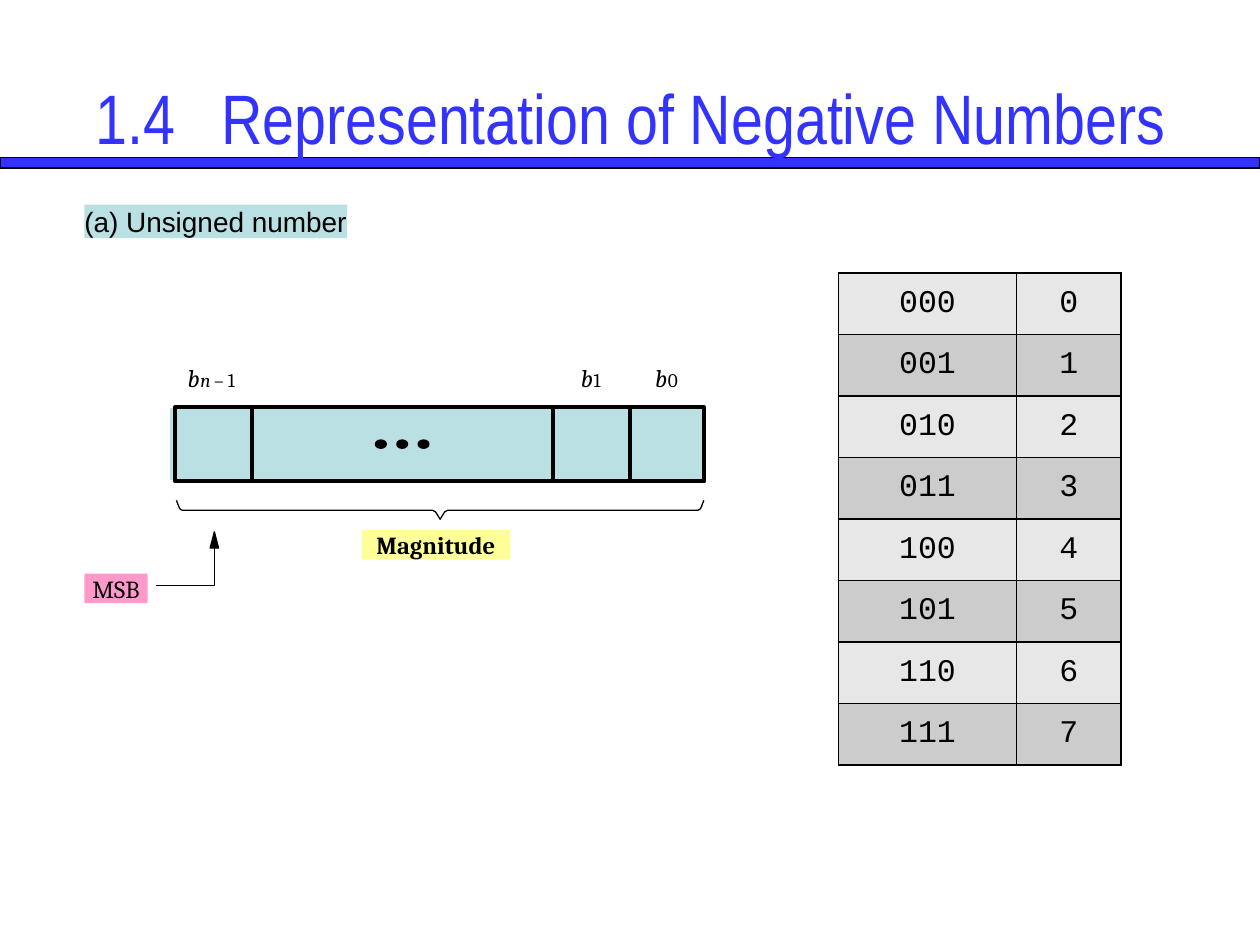
import pptx
import pptx.util
import pptx.dml.color
import pptx.enum.shapes
import pptx.enum.text
import pptx.oxml

Pt = pptx.util.Pt
Shape = pptx.enum.shapes.MSO_SHAPE
Align = pptx.enum.text.PP_ALIGN
Anchor = pptx.enum.text.MSO_ANCHOR
NAMESPACE = "http://schemas.openxmlformats.org/drawingml/2006/main"
COLORS = {
    "blue": "3333FF", "black": "000000", "white": "FFFFFF", "teal": "BBE0E3",
    "yellow": "FFFF99", "pink": "FF99CC", "light": "E7E7E7", "dark": "CCCCCC",
}


def rgb(name):
    return pptx.dml.color.RGBColor.from_string(COLORS[name])


def set_text(frame, text, size, font, color="black", bold=False, italic=False,
             align=Align.LEFT, anchor=Anchor.MIDDLE, wrap=False, margin=0):
    frame.auto_size = pptx.enum.text.MSO_AUTO_SIZE.NONE
    frame.word_wrap = wrap
    frame.vertical_anchor = anchor
    frame.margin_left = frame.margin_right = Pt(margin)
    frame.margin_top = frame.margin_bottom = Pt(margin / 2)
    paragraph = frame.paragraphs[0]
    paragraph.alignment = align
    run = paragraph.add_run()
    run.text = text
    run.font.size = Pt(size)
    run.font.name = font
    run.font.bold = bold
    run.font.italic = italic
    run.font.color.rgb = rgb(color)


def style_shape(shape, fill=None, line=None, line_width=0.75):
    shape.shadow.inherit = False
    if fill:
        shape.fill.solid()
        shape.fill.fore_color.rgb = rgb(fill)
    else:
        shape.fill.background()
    if line:
        shape.line.color.rgb = rgb(line)
        shape.line.width = Pt(line_width)
    else:
        shape.line.fill.background()


def add_shape(slide, kind, left, top, width, height, **style):
    shape = slide.shapes.add_shape(kind, Pt(left), Pt(top), Pt(width), Pt(height))
    style_shape(shape, **style)
    return shape


def add_path(slide, left, top, points):
    points = [(Pt(left + x), Pt(top + y)) for x, y in points]
    builder = slide.shapes.build_freeform(*points[0])
    builder.add_line_segments(points[1:], close=False)
    style_shape(builder.convert_to_shape(), line="black", line_width=0)


def add_tag(slide, text, left, top, width, height, fill, size=14, font="Cambria", **text_format):
    tag = add_shape(slide, Shape.RECTANGLE, left, top, width, height, fill=fill)
    set_text(tag.text_frame, text, size, font, **text_format)


def add_title(slide, left, top, width, height):
    bar = add_shape(slide, Shape.RECTANGLE, 0, 90, 720, 6, fill="blue", line="black")
    title = slide.shapes.title
    title._element.addprevious(bar._element)
    title.left, title.top, title.width, title.height = map(Pt, (left, top, width, height))
    set_text(title.text_frame, "1.4\tRepresentation of Negative Numbers", 40, "Arial Narrow",
             color="blue", align=Align.CENTER, wrap=True, margin=7.2)


def add_bit_label(slide, left, top, subscript):
    pieces = [("b", 0, 0, 14)]
    pieces += [(sign, 7.3 + 7.9 * i, 2.9, 11) for i, sign in enumerate(subscript)]
    for text, x, y, size in pieces:
        box = slide.shapes.add_textbox(Pt(left + x), Pt(top + y), Pt(8), Pt(size * 1.18))
        set_text(box.text_frame, text, size, "Cambria", italic=text.isalpha(), anchor=Anchor.TOP)


def add_brace(slide, left, top, width, height):
    middle = width / 2
    shoulder = height * 0.53
    half = [(0, 0), (1.7, shoulder * 0.75), (2.4, shoulder * 0.92), (3.6, shoulder),
            (middle - 4.3, shoulder), (middle - 2.6, shoulder * 1.15), (middle, height)]
    mirrored = [(width - x, y) for x, y in reversed(half[:-1])]
    add_path(slide, left, top, half + mirrored)


def add_register(slide, left, top, height):
    add_shape(slide, Shape.RECTANGLE, left - 3.6, top, 306, height - 0.7, fill="teal", line="white")
    for i in range(3):
        add_shape(slide, Shape.OVAL, left + 115.2 + 12.2 * i, top + 19.6, 4.7, 3.2,
                  fill="black", line="black", line_width=2.25)
    x = left
    for width in (43.9, 172.1, 43.9, 42.5):
        add_shape(slide, Shape.RECTANGLE, x, top, width, height, line="black", line_width=2.25)
        x += width


def add_diagram(slide, left, top):
    for x, subscript in ((59, "n–1"), (283.7, "1"), (326.2, "0")):
        add_bit_label(slide, left + x, top, subscript)
    add_register(slide, left + 51.9, top + 25.2, 42.5)
    add_brace(slide, left + 52.6, top + 78.5, 301.4, 10.8)
    add_tag(slide, "Magnitude", left + 158.4, top + 95.6, 85, 16.8, "yellow",
            bold=True, align=Align.CENTER)
    add_tag(slide, "MSB", left, top + 120.4, 36.2, 16.8, "pink", align=Align.CENTER)
    add_path(slide, left + 41, top + 105.8, [(0, 21.6), (33.3, 21.6), (33.3, 0)])
    add_shape(slide, Shape.ISOSCELES_TRIANGLE, left + 71.9, top + 96.5, 4.8, 9.3,
              fill="black", line="black", line_width=0)


def set_borders(cell, width):
    properties = cell._tc.get_or_add_tcPr()
    for i, side in enumerate(("lnL", "lnR", "lnT", "lnB")):
        properties.insert(i, pptx.oxml.parse_xml(
            f'<a:{side} xmlns:a="{NAMESPACE}" w="{int(Pt(width))}"><a:solidFill>'
            f'<a:srgbClr val="{COLORS["black"]}"/></a:solidFill></a:{side}>'))


def fill_cell(cell, text, fill):
    cell.fill.solid()
    cell.fill.fore_color.rgb = rgb(fill)
    cell.vertical_anchor = Anchor.MIDDLE
    paragraph = cell.text_frame.paragraphs[0]
    paragraph.alignment = Align.CENTER
    run = paragraph.add_run()
    run.text = text
    run.font.size = Pt(18)
    run.font.name = "Courier New"
    run.font.color.rgb = rgb("black")
    set_borders(cell, 1)


def add_values(slide, left, top, widths, row_height, count):
    frame = slide.shapes.add_table(count, len(widths), Pt(left), Pt(top),
                                   Pt(sum(widths)), Pt(row_height * count))
    table = frame.table
    table.first_row = table.horz_banding = False
    for column, width in zip(table.columns, widths):
        column.width = Pt(width)
    for value in range(count):
        table.rows[value].height = Pt(row_height)
        for column, text in enumerate((f"{value:03b}", str(value))):
            fill_cell(table.cell(value, column), text, "dark" if value % 2 else "light")


def main():
    presentation = pptx.Presentation()
    presentation.slide_width, presentation.slide_height = Pt(720), Pt(540)
    slide = presentation.slides.add_slide(presentation.slide_layouts[5])
    add_title(slide, 36, 21.6, 648, 90)
    add_diagram(slide, 48.2, 207.4)
    add_tag(slide, "(a) Unsigned number", 48.2, 116.9, 150.3, 19.2, "teal", size=16, font="Arial")
    add_values(slide, 479, 156, (102, 59.6), 35.16, 8)
    presentation.save("out.pptx")


if __name__ == "__main__":
    main()
